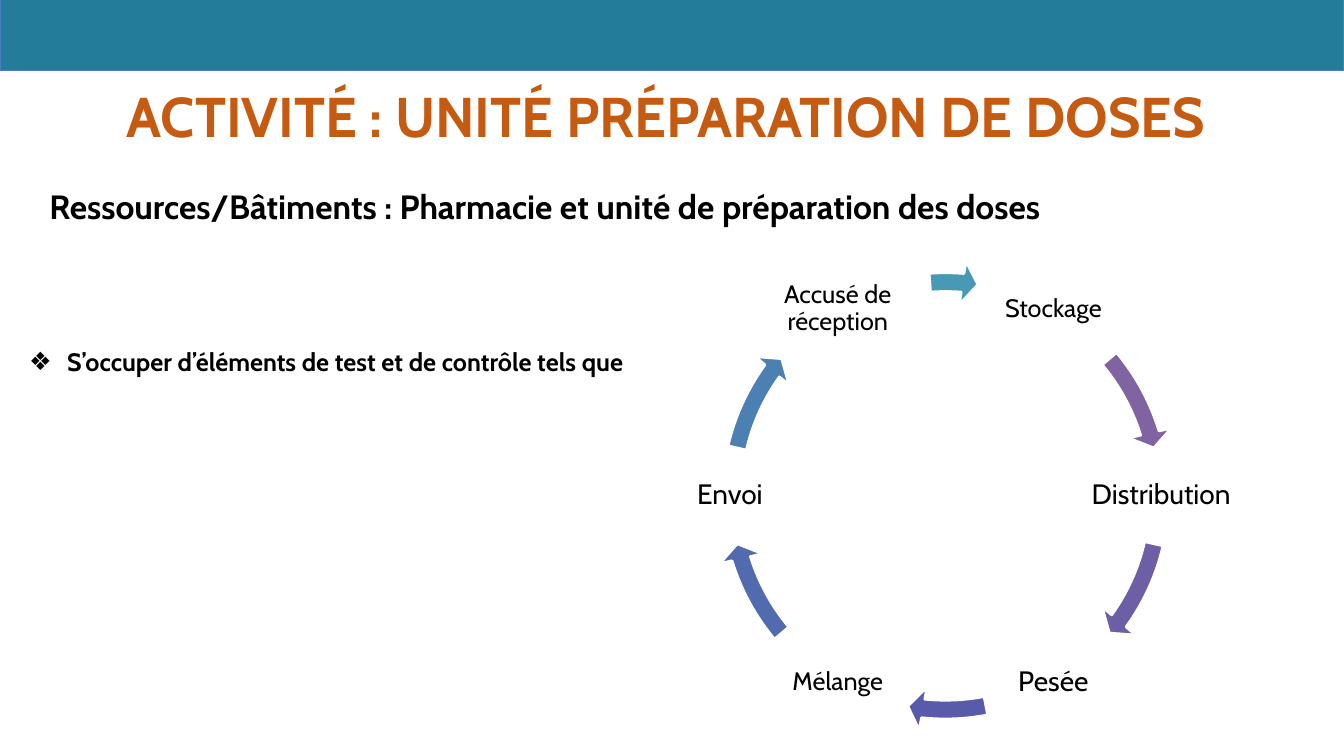
from dataclasses import dataclass
from math import cos, radians, sin

from lxml.etree import SubElement
from pptx import Presentation
from pptx.dml.color import RGBColor
from pptx.enum.shapes import MSO_SHAPE as Shape
from pptx.enum.text import MSO_ANCHOR as Anchor, MSO_AUTO_SIZE as AutoSize, PP_ALIGN as Align
from pptx.oxml.ns import qn
from pptx.util import Pt


@dataclass(frozen=True)
class Theme:
    font: str = "Cabin"
    bar: str = "237C9A"
    bar_line: str = "4B7EBC"
    title: str = "C55A11"
    text: str = "000000"
    arrow_line: str = "FFFFFF"
    title_size: int = 40
    heading_size: int = 24
    large_size: int = 20
    body_size: int = 18


theme = Theme()


def place(shape, left, top, width, height):
    shape.left, shape.top = Pt(left), Pt(top)
    shape.width, shape.height = Pt(width), Pt(height)


def write(shape, text, size, color, bold, align, anchor, margins):
    frame = shape.text_frame
    frame.word_wrap = True
    frame.auto_size = AutoSize.NONE
    frame.vertical_anchor = anchor
    frame.margin_left, frame.margin_top, frame.margin_right, frame.margin_bottom = map(Pt, margins)
    paragraph = frame.paragraphs[0]
    paragraph.alignment = align
    paragraph.space_before = Pt(0)
    run = paragraph.add_run()
    run.text = text
    run.font.name = theme.font
    run.font.size = Pt(size)
    run.font.bold = bold
    run.font.color.rgb = RGBColor.from_string(color)
    return paragraph


presentation = Presentation()
presentation.slide_width, presentation.slide_height = Pt(960), Pt(540)
slide = presentation.slides.add_slide(presentation.slide_layouts[3])
title, heading, test_list = slide.placeholders

bar = slide.shapes.add_shape(Shape.RECTANGLE, Pt(0), Pt(0), Pt(960), Pt(50.4))
bar.shadow.inherit = False
bar.fill.solid()
bar.fill.fore_color.rgb = RGBColor.from_string(theme.bar)
bar.line.color.rgb = RGBColor.from_string(theme.bar_line)
bar.line.width = Pt(0.75)

place(title, 13.7, 54.7, 923.8, 81.4)
write(title, "ACTIVITÉ : UNITÉ PRÉPARATION DE DOSES", theme.title_size, theme.title,
      True, Align.CENTER, Anchor.TOP, (7.2, 3.6, 7.2, 0))

place(heading, 28.1, 128.9, 825.1, 59)
paragraph = write(heading, "Ressources/Bâtiments : Pharmacie et unité de préparation des doses",
                  theme.heading_size, theme.text, True, Align.LEFT, Anchor.TOP, (7.2, 3.6, 7.2, 0))
properties = paragraph._p.get_or_add_pPr()
properties.set("marL", "0")
properties.set("indent", "0")
SubElement(properties, qn("a:buNone"))

place(test_list, 13.7, 244.1, 482.4, 36.7)
paragraph = write(test_list, "S’occuper d’éléments de test et de contrôle tels que",
                  theme.body_size, theme.text, True, Align.LEFT, Anchor.TOP, (7.2, 3.6, 7.2, 3.6))
properties = paragraph._p.get_or_add_pPr()
properties.set("marL", str(Pt(27)))
properties.set("indent", str(Pt(-27)))
SubElement(properties, qn("a:buChar")).set("char", "❖")

center_x, center_y, radius = 675.4, 354.2, 154
ring_size, step_height = 337, 69
adjustment_per_degree = 0.6
steps = [
    ("Stockage", 107, theme.body_size, "8064A2", 320.04, 342.9),
    ("Distribution", 106, theme.large_size, "6D5EA6", 12.93, 35.79),
    ("Pesée", 96, theme.large_size, "585AAA", 79.1, 96),
    ("Mélange", 99, theme.body_size, "526BAE", 140.04, 162.9),
    ("Envoi", 103, theme.large_size, "4C80B2", 192.93, 215.79),
    ("Accusé de réception", 131, theme.body_size, "4799B5", 265.78, 274.57),
]
cycle = slide.shapes.add_group_shape()
for index, (label, width, size, color, start, end) in enumerate(steps):
    angle = radians(60 * index - 60)
    left = center_x + radius * cos(angle) - width / 2
    top = center_y + radius * sin(angle) - step_height / 2
    step = cycle.shapes.add_textbox(Pt(left), Pt(top), Pt(width), Pt(step_height))
    paragraph = write(step, label, size, theme.text, False, Align.CENTER, Anchor.MIDDLE, (2, 2, 2, 2))
    paragraph.line_spacing = 0.9

    arrow = cycle.shapes.add_shape(Shape.CIRCULAR_ARROW, Pt(center_x - ring_size / 2),
                                   Pt(center_y - ring_size / 2), Pt(ring_size), Pt(ring_size))
    arrow.shadow.inherit = False
    arrow.fill.solid()
    arrow.fill.fore_color.rgb = RGBColor.from_string(color)
    arrow.line.color.rgb = RGBColor.from_string(theme.arrow_line)
    arrow.line.width = Pt(2)
    shaft, head = 0.04, 0.047
    values = (shaft, 2.5, end * adjustment_per_degree, start * adjustment_per_degree, head)
    for position, value in enumerate(values):
        arrow.adjustments[position] = value

presentation.save("out.pptx")
